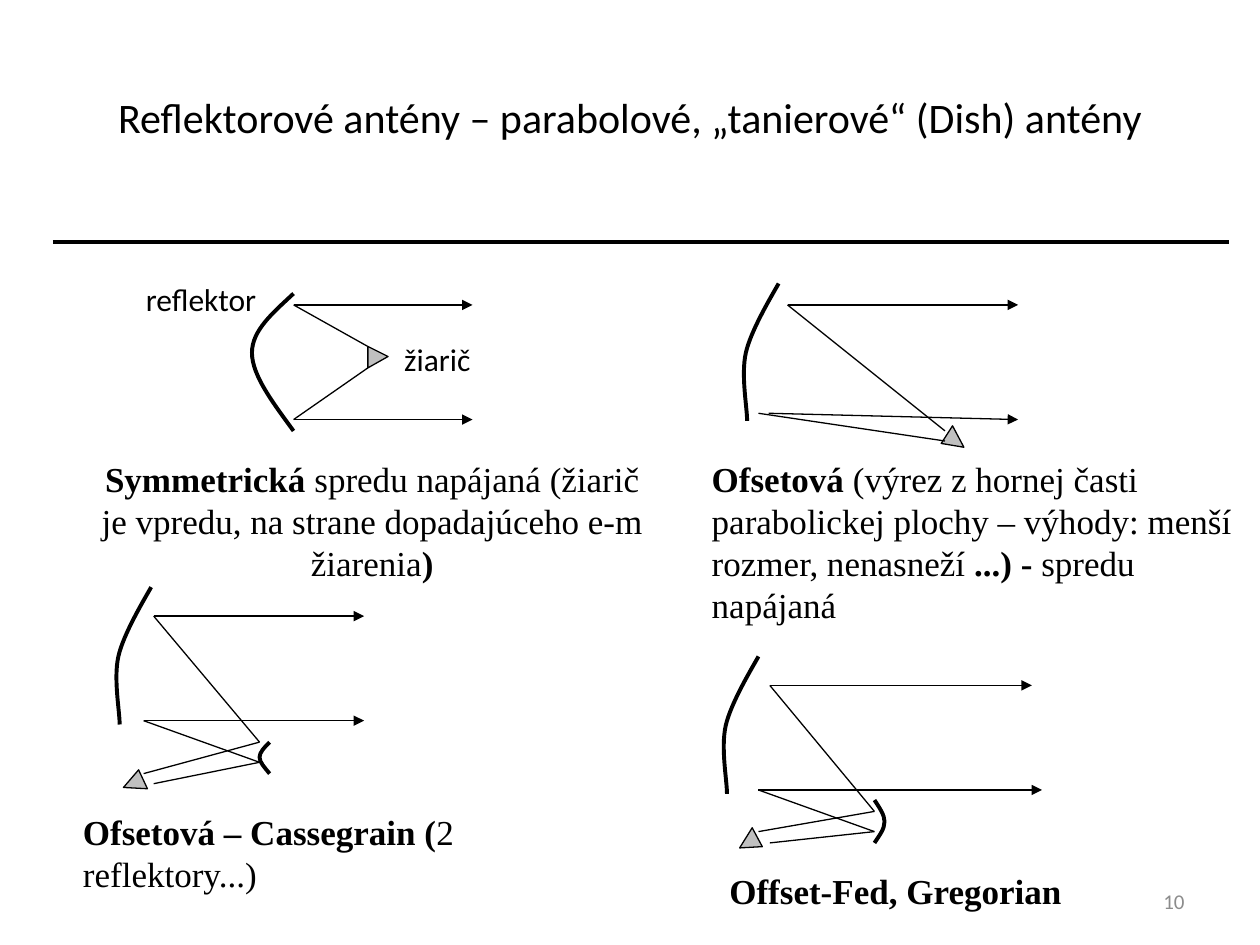
from dataclasses import dataclass

from lxml import etree
from pptx import Presentation
from pptx.dml.color import RGBColor
from pptx.enum.shapes import MSO_CONNECTOR
from pptx.enum.text import MSO_ANCHOR, MSO_AUTO_SIZE, PP_ALIGN
from pptx.oxml.ns import qn
from pptx.util import Inches, Pt

BLACK = RGBColor(0, 0, 0)
SILVER = RGBColor(0xC0, 0xC0, 0xC0)
GRAY = RGBColor(0x8C, 0x8C, 0x8C)
LEFT, CENTER, RIGHT = PP_ALIGN.LEFT, PP_ALIGN.CENTER, PP_ALIGN.RIGHT
TOP, MIDDLE = MSO_ANCHOR.TOP, MSO_ANCHOR.MIDDLE
GROW, FIXED = MSO_AUTO_SIZE.SHAPE_TO_FIT_TEXT, MSO_AUTO_SIZE.NONE
STRAIGHT = MSO_CONNECTOR.STRAIGHT
SANS, SERIF = "Calibri", "Times New Roman"
THIN, THICK = 0.75, 2.25

Point = tuple[float, float]


@dataclass
class Label:
    box: tuple[float, float, float, float]
    runs: list[tuple[str, bool]]
    size: float = 20
    face: str = SERIF
    color: RGBColor = BLACK
    align: PP_ALIGN = LEFT
    anchor: MSO_ANCHOR = TOP
    fit: MSO_AUTO_SIZE = GROW
    pitch: float | None = None


@dataclass
class Mirror:
    left: float
    top: float
    curve: list[Point]


@dataclass
class Beam:
    points: list[Point]
    tip: bool = True


DISH = [(0.33, 0), (0.17, 0.15), (0, 0.29), (0, 0.47),
        (0, 0.65), (0.17, 0.87), (0.33, 1.09)]
OFFSET = [(0.3, 0), (0.25, 0.09), (0.08, 0.37), (0.04, 0.55),
          (0, 0.73), (0.05, 0.98), (0.05, 1.09)]
CONVEX = [(0.08, 0), (0.04, 0.04), (0, 0.08), (0, 0.12),
          (0, 0.16), (0.04, 0.2), (0.08, 0.25)]
CONCAVE = [(0, 0), (0.04, 0.06), (0.08, 0.12), (0.08, 0.17),
           (0.08, 0.23), (0.04, 0.28), (0, 0.34)]

MIRRORS = [
    Mirror(2, 2.33, DISH),
    Mirror(5.88, 2.25, OFFSET),
    Mirror(0.9, 4.66, OFFSET),
    Mirror(5.72, 5.21, OFFSET),
    Mirror(2.06, 5.89, CONVEX),
    Mirror(6.94, 6.35, CONCAVE),
]

FEEDS = [
    [(2.92, 2.75), (3.08, 2.83), (2.92, 2.92)],
    [(7.56, 3.38), (7.65, 3.55), (7.47, 3.52)],
    [(1.17, 6.26), (0.98, 6.25), (1.1, 6.11)],
    [(6.05, 6.72), (5.87, 6.73), (5.97, 6.57)],
]

BEAMS = [
    Beam([(2.92, 2.75), (2.33, 2.42), (3.75, 2.42)]),
    Beam([(2.92, 2.92), (2.33, 3.33), (3.75, 3.33)]),
    Beam([(7.5, 3.42), (6.25, 2.42), (8.08, 2.42)]),
    Beam([(7.5, 3.5), (6.02, 3.28)], tip=False),
    Beam([(6.1, 3.28), (8.08, 3.33)]),
    Beam([(1.22, 6.22), (2.06, 6.05), (1.14, 5.72), (2.89, 5.72)]),
    Beam([(1.14, 6.14), (2.06, 5.89), (1.22, 4.89), (2.89, 4.89)]),
    Beam([(6.11, 6.69), (6.94, 6.6), (6.02, 6.27), (8.27, 6.27)]),
    Beam([(6.02, 6.6), (6.94, 6.44), (6.11, 5.44), (8.19, 5.44)]),
]

LABELS = [
    Label((7.17, 6.95, 2.33, 0.4), [("10", False)], 12, SANS, GRAY,
          RIGHT, MIDDLE, FIXED),
    Label((0.5, 0.3, 9, 1.25),
          [("Reflektorové antény – parabolové, „tanierové“ (Dish) antény", False)],
          24, SANS, align=CENTER, anchor=MIDDLE, fit=FIXED),
    Label((0.67, 3.58, 4.57, 1.1),
          [("Symmetrická ", True),
           ("spredu napájaná (žiarič je vpredu, na strane dopadajúceho e-m žiarenia",
            False), (")", True)], align=CENTER, pitch=24),
    Label((5.55, 3.58, 4.45, 1.43),
          [("Ofsetová ", True),
           ("(výrez z hornej časti parabolickej plochy – výhody: menší rozmer, nenasneží",
            False), (" ...) - ", True), ("spredu napájaná", False)], pitch=24),
    Label((0.56, 6.38, 3.33, 0.77),
          [("Ofsetová – Cassegrain (", True), ("2 reflektory...)", False)], pitch=24),
    Label((5.69, 6.85, 2.92, 0.43), [("Offset-Fed, Gregorian", True)], pitch=24),
    Label((3.11, 2.65, 1.42, 0.4), [("žiarič", False)], 18, SANS),
    Label((1.06, 2.17, 1.42, 0.4), [("reflektor", False)], 18, SANS),
]


def write(shapes, label: Label) -> None:
    frame = shapes.add_textbox(*map(Inches, label.box)).text_frame
    frame.word_wrap = True
    frame.auto_size = label.fit
    frame.vertical_anchor = label.anchor
    para = frame.paragraphs[0]
    para.alignment = label.align
    if label.pitch:
        para.line_spacing = Pt(label.pitch)
    font = para.font
    font.name, font.size = label.face, Pt(label.size)
    font.color.rgb = label.color
    for text, bold in label.runs:
        run = para.add_run()
        run.text = text
        run.font.bold = bold


def stroke(line, width: float) -> None:
    line.color.rgb = BLACK
    line.width = Pt(width)


def link(shapes, start: Point, end: Point, width: float, tip: bool = False) -> None:
    line = shapes.add_connector(STRAIGHT, *map(Inches, start + end))
    stroke(line.line, width)
    props = line._element.spPr
    if tip:
        etree.SubElement(props.find(qn("a:ln")), qn("a:tailEnd"), type="triangle")
    etree.SubElement(props, qn("a:effectLst"))


def trace(shapes, points: list[Point], closed: bool, width: float):
    spots = [(Inches(x), Inches(y)) for x, y in points]
    pen = shapes.build_freeform(*spots[0])
    pen.add_line_segments(spots[1:], close=closed)
    shape = pen.convert_to_shape()
    shape.shadow.inherit = False
    stroke(shape.line, width)
    return shape


def reflect(shapes, mirror: Mirror) -> None:
    knots = [(mirror.left + x, mirror.top + y) for x, y in mirror.curve]
    shape = trace(shapes, knots, False, THICK)
    shape.fill.background()
    lines = list(shape._element.iter(qn("a:lnTo")))
    for i in range(0, len(lines), 3):
        bend = etree.Element(qn("a:cubicBezTo"))
        lines[i].addprevious(bend)
        for line in lines[i:i + 3]:
            bend.append(line[0])
            line.getparent().remove(line)


def main() -> None:
    """Build the slide on reflector antennas."""
    deck = Presentation()
    deck.slide_width, deck.slide_height = Inches(10), Inches(7.5)
    shapes = deck.slides.add_slide(deck.slide_layouts[6]).shapes
    link(shapes, (0.42, 1.92), (9.75, 1.92), THICK)
    for mirror in MIRRORS:
        reflect(shapes, mirror)
    for feed in FEEDS:
        fill = trace(shapes, feed, True, THIN).fill
        fill.solid()
        fill.fore_color.rgb = SILVER
    for beam in BEAMS:
        last = len(beam.points) - 2
        for i, (start, end) in enumerate(zip(beam.points, beam.points[1:])):
            link(shapes, start, end, THIN, beam.tip and i == last)
    for label in LABELS:
        write(shapes, label)
    deck.save("out.pptx")


if __name__ == "__main__":
    main()
